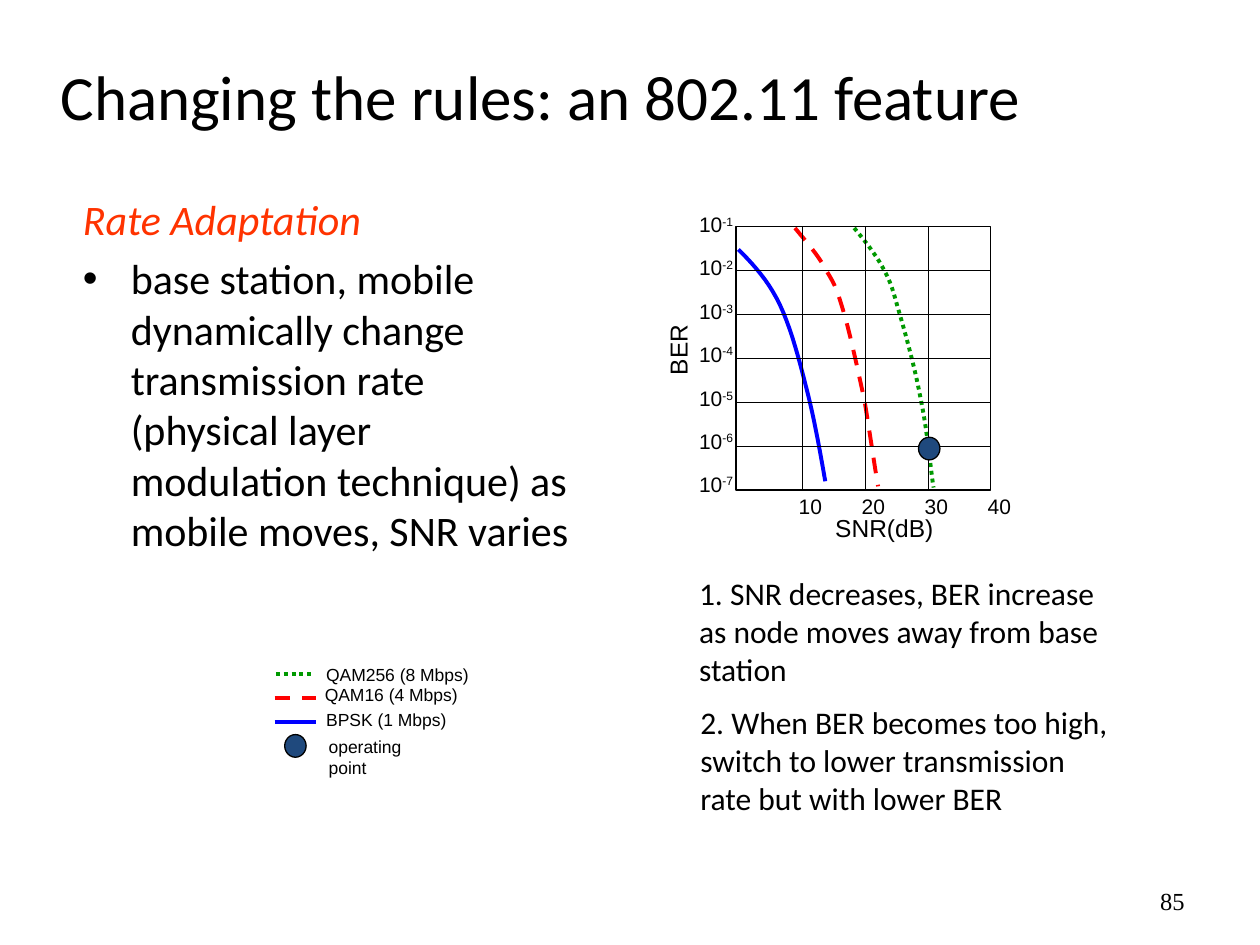
"""Build a slide on 802.11 rate adaptation with a BER against SNR diagram."""
from dataclasses import dataclass

from lxml import etree
from pptx import Presentation
from pptx.dml.color import RGBColor
from pptx.enum.dml import MSO_LINE
from pptx.enum.shapes import MSO_CONNECTOR, MSO_SHAPE
from pptx.enum.text import MSO_ANCHOR, MSO_AUTO_SIZE, PP_ALIGN
from pptx.oxml.ns import qn
from pptx.util import Emu, Pt

PX = 9144
TITLE_ONLY = 5
CURVE_STEPS = 10
SOLID, DASH, DOT = MSO_LINE.SOLID, MSO_LINE.DASH, MSO_LINE.ROUND_DOT
STRAIGHT = MSO_CONNECTOR.STRAIGHT
RECTANGLE, OVAL = MSO_SHAPE.RECTANGLE, MSO_SHAPE.OVAL
TOP, MIDDLE = MSO_ANCHOR.TOP, MSO_ANCHOR.MIDDLE
LEFT, RIGHT = PP_ALIGN.LEFT, PP_ALIGN.RIGHT
NO_AUTO_SIZE = MSO_AUTO_SIZE.NONE


@dataclass(frozen=True)
class Style:
    """Typeface, size and colour of a run."""
    font: str
    size: int
    color: str = "000000"
    italic: bool = False


@dataclass(frozen=True)
class Theme:
    """Colours, line widths and text styles of the slide."""
    ink: str = "000000"
    marker: str = "1F497D"
    thin: float = 0.75
    thick: float = 2.25
    title: Style = Style("Calibri", 36)
    heading: Style = Style("Calibri", 24, "FF3300", True)
    body: Style = Style("Calibri", 24)
    note: Style = Style("Calibri", 18)
    axis: Style = Style("Arial", 14)
    tick: Style = Style("Arial", 12)
    legend: Style = Style("Arial", 10)
    number: Style = Style("Times New Roman", 14)


@dataclass(frozen=True)
class Box:
    """Position and size in px."""
    left: int
    top: int
    width: int
    height: int

    @property
    def emu(self) -> tuple:
        return tuple(Emu(length * PX) for length in (self.left, self.top, self.width, self.height))


@dataclass(frozen=True)
class Series:
    """A modulation: its line, legend entry and Bezier curve points."""
    label: str
    color: str
    dash: object
    points: tuple
    key_y: int
    key_ends: tuple
    label_box: Box


THEME = Theme()
FRAME = Box(584, 180, 202, 209)
ROWS, MIDDLE_ROW = 6, 3
FIRST_COLUMN, COLUMN_STEP = 637, 50
SERIES = (
    Series("BPSK (1 Mbps)", "0000FF", SOLID,
           ((586, 198), (598, 210), (610, 223), (619, 242), (628, 261), (635, 288), (641, 312),
            (647, 335), (653, 371), (655, 382)), 573, (218, 251), Box(249, 558, 115, 27)),
    Series("QAM16 (4 Mbps)", "FF0000", DASH,
           ((631, 181), (640, 192), (650, 203), (656, 215), (663, 226), (665, 232), (670, 249),
            (675, 266), (681, 294), (686, 317), (690, 340), (693, 363), (697, 386)),
           554, (218, 251), Box(248, 538, 126, 27)),
    Series("QAM256 (8 Mbps)", "009900", DOT,
           ((678, 181), (687, 192), (696, 203), (702, 215), (708, 226), (709, 232), (714, 249),
            (719, 266), (727, 295), (731, 318), (736, 341), (739, 376), (741, 387)),
           535, (219, 249), Box(249, 522, 133, 27)),
)
MARKERS = (Box(729, 347, 17, 18), Box(226, 583, 17, 18))
NOTES = (
    (Box(545, 451, 350, 100), "1. SNR decreases, BER increase as node moves away from base station"),
    (Box(546, 553, 350, 101),
     "2. When BER becomes too high, switch to lower transmission rate but with lower BER"),
)


def add_run(paragraph, text: str, style: Style, baseline: int = 0) -> None:
    """Append a styled run, raised by a baseline in thousandths of a percent."""
    run = paragraph.add_run()
    run.text = text
    font = run.font
    font.name, font.size, font.italic = style.font, Pt(style.size), style.italic
    font.color.rgb = RGBColor.from_string(style.color)
    if baseline:
        run._r.get_or_add_rPr().set("baseline", str(baseline))


def add_text(slide, box: Box, text: str, style: Style, wrap: bool = False,
             exponent: str = "", align=LEFT, anchor=TOP):
    """Add a text box with one paragraph and an optional exponent."""
    shape = slide.shapes.add_textbox(*box.emu)
    frame = shape.text_frame
    frame.word_wrap, frame.vertical_anchor = wrap, anchor
    paragraph = frame.paragraphs[0]
    paragraph.alignment = align
    add_run(paragraph, text, style)
    if exponent:
        add_run(paragraph, exponent, style, 30000)
    return shape


def format_line(shape, color: str, width: float, dash=SOLID) -> None:
    """Set the colour, width and dash of a line."""
    shape.line.color.rgb = RGBColor.from_string(color)
    shape.line.width = Pt(width)
    shape.line.dash_style = dash


def add_line(slide, start: tuple, end: tuple, color: str, width: float, dash=SOLID):
    """Add a straight connector without a shadow."""
    line = slide.shapes.add_connector(STRAIGHT, *(Emu(round(c * PX)) for c in start + end))
    format_line(line, color, width, dash)
    etree.SubElement(line._element.spPr, qn("a:effectLst"))
    return line


def add_outline(slide, preset, box: Box, fill: str = ""):
    """Add a thinly outlined preset shape, filled if a colour is given."""
    shape = slide.shapes.add_shape(preset, *box.emu)
    shape.shadow.inherit = False
    format_line(shape, THEME.ink, THEME.thin)
    if fill:
        shape.fill.solid()
        shape.fill.fore_color.rgb = RGBColor.from_string(fill)
    else:
        shape.fill.background()
    return shape


def bezier_point(controls: tuple, t: float) -> tuple:
    """Return the EMU point at t on a cubic Bezier segment."""
    weights = ((1 - t) ** 3, 3 * t * (1 - t) ** 2, 3 * t ** 2 * (1 - t), t ** 3)
    return tuple(round(PX * sum(w * c for w, c in zip(weights, axis))) for axis in zip(*controls))


def add_curve(slide, series: Series) -> None:
    """Draw a series as a smooth open outline."""
    points = series.points
    builder = slide.shapes.build_freeform(*(c * PX for c in points[0]))
    builder.add_line_segments(
        [bezier_point(points[first:first + 4], step / CURVE_STEPS)
         for first in range(0, len(points) - 1, 3) for step in range(1, CURVE_STEPS + 1)],
        close=False)
    curve = builder.convert_to_shape()
    curve.fill.background()
    curve.shadow.inherit = False
    format_line(curve, series.color, THEME.thick, series.dash)


def add_grid(slide) -> None:
    """Draw the plot frame, its grid lines and tick labels."""
    frame = add_outline(slide, RECTANGLE, FRAME)
    right, bottom = FRAME.left + FRAME.width, FRAME.top + FRAME.height
    for row in range(1, ROWS):
        y = FRAME.top + row * FRAME.height / ROWS
        line = add_line(slide, (FRAME.left, y), (right, y), THEME.ink, THEME.thin)
        if row == MIDDLE_ROW:
            line.begin_connect(frame, 1)
            line.end_connect(frame, 3)
    for column in range(4):
        x = FIRST_COLUMN + column * COLUMN_STEP
        if column < 3:
            add_line(slide, (x, FRAME.top), (x, bottom), THEME.ink, THEME.thin)
        add_text(slide, Box(x - 13, 387, 39, 30), str(10 * (column + 1)), THEME.tick)
    for row in range(ROWS + 1):
        top = round(163 + row * 34.4)
        add_text(slide, Box(545, top, 48, 30), "10", THEME.tick, exponent=f"-{row + 1}")


def add_body(slide) -> None:
    """Add the heading and its bullet."""
    shape = add_text(slide, Box(56, 149, 410, 508), "Rate Adaptation", THEME.heading, wrap=True)
    bullet = shape.text_frame.add_paragraph()
    add_run(bullet, "base station, mobile dynamically change transmission rate "
            "(physical layer modulation technique) as mobile moves, SNR varies", THEME.body)
    for paragraph in shape.text_frame.paragraphs:
        paragraph.space_before = Pt(4.8)
        properties = paragraph._p.get_or_add_pPr()
        properties.set("marL", str(38 * PX))
        properties.set("indent", str(-38 * PX))
    properties = bullet._p.get_or_add_pPr()
    etree.SubElement(properties, qn("a:buFont"), typeface="Arial")
    etree.SubElement(properties, qn("a:buChar"), char="•")


def add_title(slide) -> None:
    """Place and format the title placeholder."""
    title = slide.shapes.title
    title.left, title.top, title.width, title.height = Box(38, 30, 850, 92).emu
    title.text_frame.auto_size = NO_AUTO_SIZE
    title.text_frame.vertical_anchor = MIDDLE
    paragraph = title.text_frame.paragraphs[0]
    paragraph.alignment = LEFT
    add_run(paragraph, "Changing the rules: an 802.11 feature", THEME.title)


def main() -> None:
    """Build and save the presentation."""
    presentation = Presentation()
    presentation.slide_width, presentation.slide_height = Emu(1000 * PX), Emu(750 * PX)
    slide = presentation.slides.add_slide(presentation.slide_layouts[TITLE_ONLY])
    add_title(slide)
    add_body(slide)
    for series in SERIES:
        start, end = series.key_ends
        add_line(slide, (start, series.key_y), (end, series.key_y),
                 series.color, THEME.thick, series.dash)
        add_text(slide, series.label_box, series.label, THEME.legend)
        add_curve(slide, series)
    add_grid(slide)
    add_text(slide, Box(653, 402, 98, 33), "SNR(dB)", THEME.axis)
    add_text(slide, Box(508, 261, 60, 33), "BER", THEME.axis).rotation = 270
    for marker in MARKERS:
        add_outline(slide, OVAL, marker, THEME.marker)
    add_text(slide, Box(251, 579, 111, 27), "operating point", THEME.legend)
    for box, text in NOTES:
        add_text(slide, box, text, THEME.note, wrap=True)
    add_text(slide, Box(717, 695, 233, 40), "85", THEME.number, wrap=True,
             align=RIGHT, anchor=MIDDLE)
    presentation.save("out.pptx")


if __name__ == "__main__":
    main()
